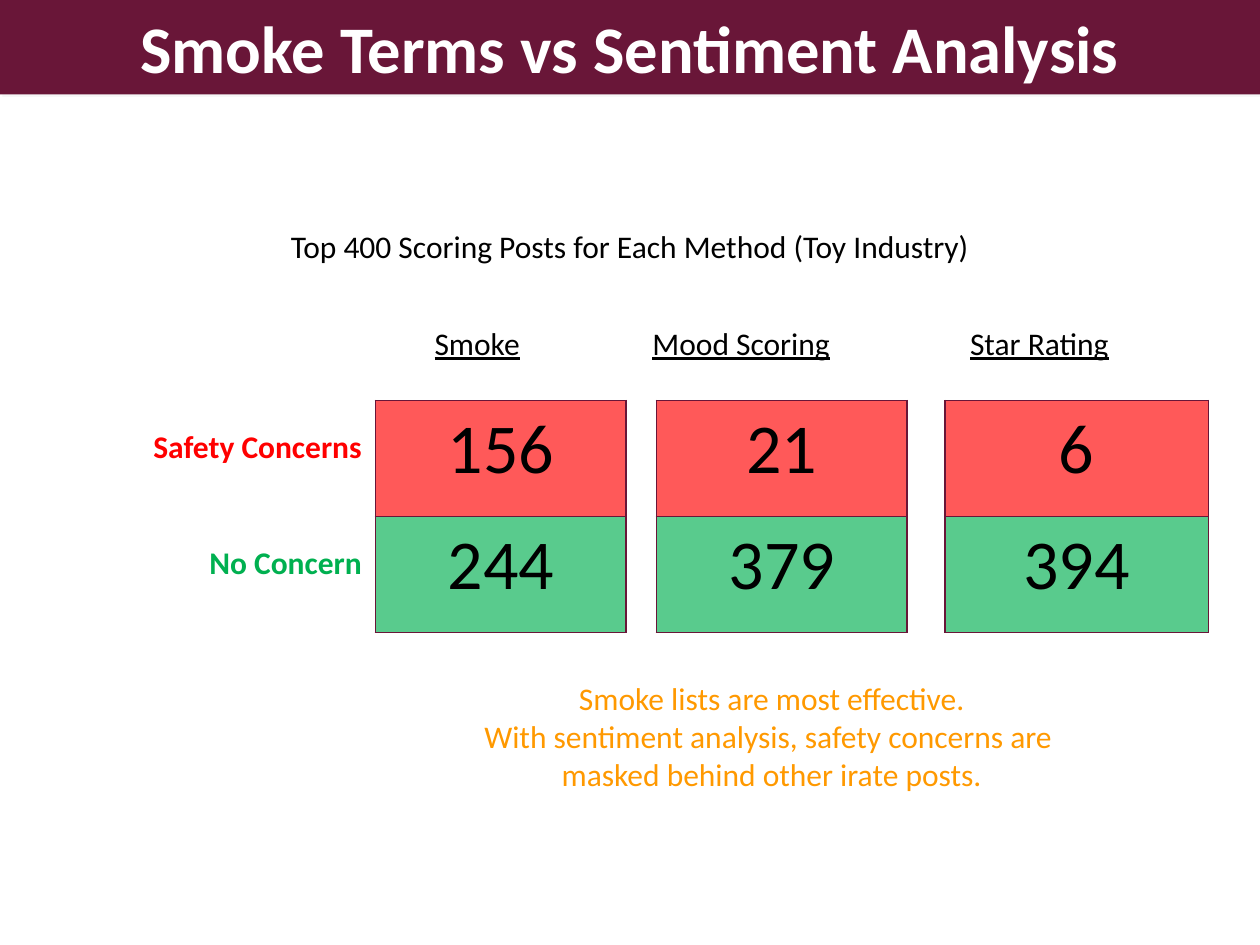
from lxml import etree
from pptx import Presentation
from pptx.dml.color import RGBColor
from pptx.enum import shapes, text
from pptx.oxml import ns
from pptx.util import Inches, Pt

HUES = {"maroon": "691638", "white": "FFFFFF", "black": "000000", "red": "FF0000",
        "green": "00B050", "orange": "FF9900", "shade": "E7E6E6"}
ALIGN = text.PP_ALIGN
ROW = 0.92


def rgb(hue):
    return RGBColor.from_string(HUES[hue])


def sub(node, tag, **attrs):
    return etree.SubElement(node, ns.qn(tag), attrs)


def write(frame, words, hue="black", size=18, align=ALIGN.LEFT, **marks):
    """Fill a text frame, one paragraph for each line."""
    frame.text = words
    for para in frame.paragraphs:
        para.alignment = align
        for run in para.runs:
            form = {"name": "Calibri", "size": Pt(size), **marks}
            for key, val in form.items():
                setattr(run.font, key, val)
            run.font.color.rgb = rgb(hue)


def label(slide, box, words, **form):
    frame = slide.shapes.add_textbox(*map(Inches, box)).text_frame
    frame.word_wrap = True
    write(frame, words, **form)


def block(slide, box, hue):
    shape = slide.shapes.add_shape(shapes.MSO_SHAPE.RECTANGLE, *map(Inches, box))
    shape.shadow.inherit = False
    shape.fill.solid()
    shape.fill.fore_color.rgb = rgb(hue)
    shape.line.fill.background()
    return shape


def banner(slide, box, words):
    bar = block(slide, box, "maroon")
    # Thin, pale drop shadow
    effects = bar._element.spPr.find(ns.qn("a:effectLst"))
    shadow = sub(effects, "a:outerShdw", blurRad="0", dist=str(Pt(2)), dir="2700000")
    tint = sub(shadow, "a:srgbClr", val=HUES["shade"])
    sub(tint, "a:alpha", val="31000")
    bar.text_frame.vertical_anchor = text.MSO_ANCHOR.MIDDLE
    write(bar.text_frame, words, "white", 38, ALIGN.CENTER, bold=True)


def paint(cell, hue):
    """Give a cell its see-through fill and its four borders."""
    cell.fill.solid()
    cell.fill.fore_color.rgb = rgb(hue)
    props = cell._tc.get_or_add_tcPr()
    sub(props.find(".//" + ns.qn("a:srgbClr")), "a:alpha", val="65000")
    for spot, side in enumerate("LRTB"):
        edge = sub(props, "a:ln" + side, w=str(Pt(1)))
        sub(sub(edge, "a:solidFill"), "a:srgbClr", val=HUES["maroon"])
        props.insert(spot, edge)


def counts(slide, box, values):
    """One method's table: concerns above, no concern below."""
    table = slide.shapes.add_table(2, 1, *map(Inches, box)).table
    table.first_row = table.horz_banding = False
    for row, (value, hue) in enumerate(zip(values, ("red", "green"))):
        table.rows[row].height = Inches(ROW)
        cell = table.cell(row, 0)
        write(cell.text_frame, str(value), size=40, align=ALIGN.CENTER)
        paint(cell, hue)


def results(slide, left, top, wide):
    """Method heads, row labels and tables, placed in the given box."""
    # Method: head offset, head width, table offset, table width, counts
    methods = {
        "Smoke": (3.52, 1.25, 3.15, 1.99, (156, 244)),
        "Mood Scoring": (5.25, 2.24, 5.38, 1.99, (21, 379)),
        "Star Rating": (7.77, 1.89, 7.67, 2.09, (6, 394)),
    }
    for name, (head, span, start, width, values) in methods.items():
        label(slide, (left + head, top, span, 0.5), name, underline=True)
        counts(slide, (left + start, top + 0.66, width, 2 * ROW), values)
    rows = (("Safety Concerns", "red"), ("No Concern", "green"))
    for row, (name, hue) in enumerate(rows):
        label(slide, (left, top + 0.82 + row * ROW, wide, 0.5), name,
              hue=hue, align=ALIGN.RIGHT, bold=True)


def main():
    deck = Presentation()
    deck.slide_width, deck.slide_height = Inches(10), Inches(7.5)
    slide = deck.slides.add_slide(deck.slide_layouts[6])

    # Backdrop and title
    block(slide, (0, 0, 10, 7.5), "white")
    banner(slide, (0, 0, 10, 0.75), "Smoke Terms vs Sentiment Analysis")

    # Comparison
    label(slide, (0, 1.75, 10, 0.5),
          "Top 400 Scoring Posts for Each Method (Toy Industry)", align=ALIGN.CENTER)
    results(slide, -0.17, 2.52, 3.14)

    # Takeaway
    label(slide, (2.25, 5.34, 7.75, 1.31),
          "Smoke lists are most effective.\n"
          "With sentiment analysis, safety concerns are \v"
          "masked behind other irate posts.", hue="orange", align=ALIGN.CENTER)
    deck.save("out.pptx")


if __name__ == "__main__":
    main()
